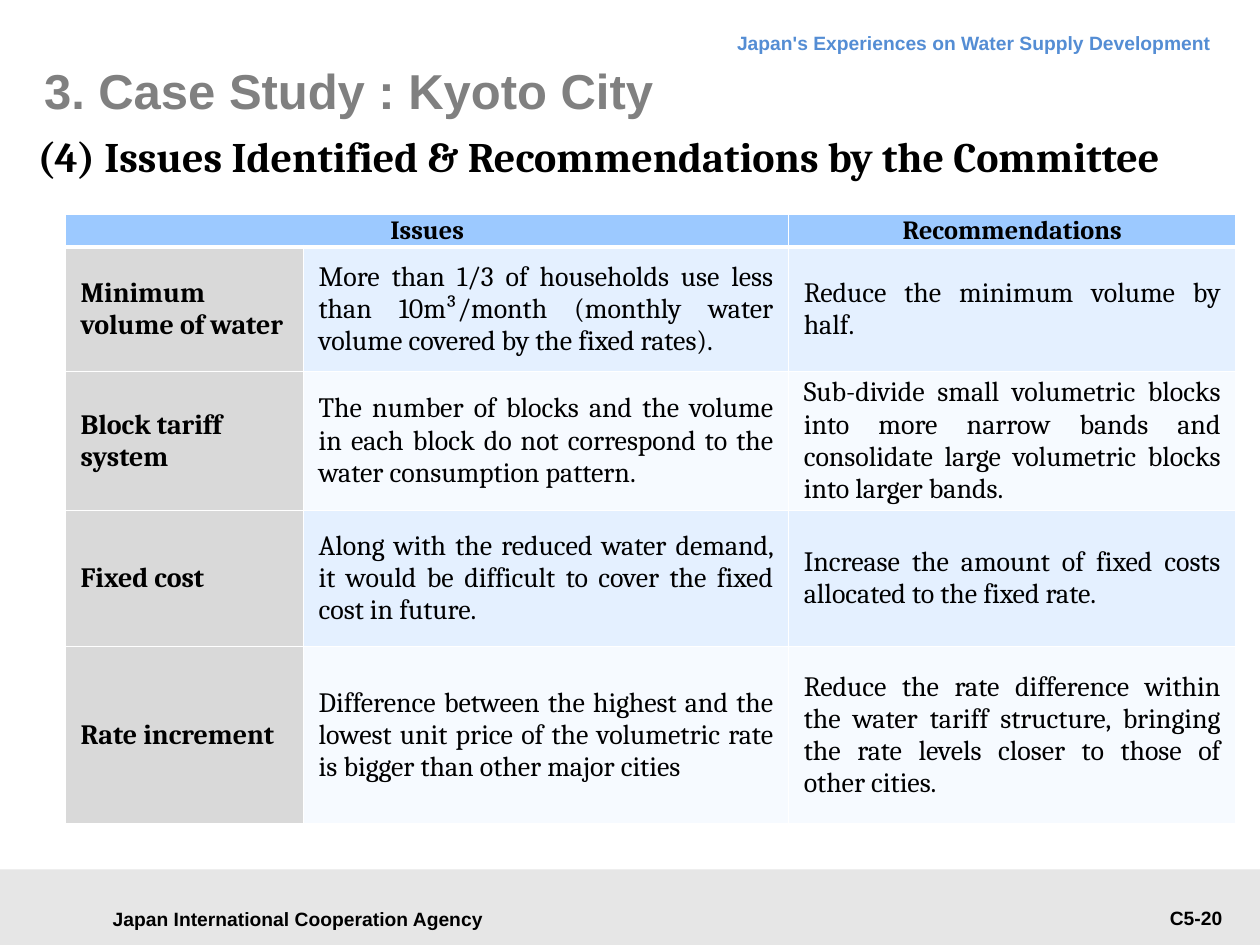
import pptx
import pptx.dml.color
import pptx.enum.shapes
import pptx.enum.text
import pptx.oxml.ns
import pptx.util
from lxml import etree

ALIGN = pptx.enum.text.PP_ALIGN
ANCHOR = pptx.enum.text.MSO_ANCHOR
Inches = pptx.util.Inches
qn = pptx.oxml.ns.qn

WIDTH, HEIGHT = 10, 7.5
FOOTER_HEIGHT = 0.6

HEADINGS = ["Issues", "", "Recommendations"]
TOPICS = [
    ("Minimum volume of water",
     "More than 1/3 of households use less than 10m³/month "
     "(monthly water volume covered by the fixed rates).",
     "Reduce the minimum volume by half."),
    ("Block tariff system",
     "The number of blocks and the volume in each block do not correspond "
     "to the water consumption pattern.",
     "Sub-divide small volumetric blocks into more narrow bands and "
     "consolidate large volumetric blocks into larger bands."),
    ("Fixed cost",
     "Along with the reduced water demand, it would be difficult to cover "
     "the fixed cost in future.",
     "Increase the amount of fixed costs allocated to the fixed rate."),
    ("Rate increment",
     "Difference between the highest and the lowest unit price of the "
     "volumetric rate is bigger than other major cities",
     "Reduce the rate difference within the water tariff structure, "
     "bringing the rate levels closer to those of other cities."),
]
TABLE_LEFT, TABLE_TOP = 0.52, 1.7
COLUMN_WIDTHS = [1.89, 3.85, 3.55]
ROW_HEIGHTS = [0.26, 0.99, 1.07, 1.08, 1.41]
HEADER_FILL, TOPIC_FILL = "9CC9FF", "D9D9D9"
BAND_FILLS = ["CAE2FF", "EFF6FF"]
HEADER_MARGINS = (0.01, 0.01, 0.01, 0)
BODY_MARGINS = (0.12, 0.04, 0.12, 0.04)

# text, (left, top, width, height), format
TEXT_BOXES = [
    ("Japan International Cooperation Agency", (0.71, 7.12, 3.31, 0.34),
     dict(align=ALIGN.CENTER, anchor=ANCHOR.MIDDLE)),
    ("Japan's Experiences on Water Supply Development", (2.72, 0.13, 6.99, 0.38),
     dict(color="548DD4", align=ALIGN.RIGHT, line_points=18)),
    ("C5-20", (8.23, 7.14, 1.57, 0.29), dict(align=ALIGN.RIGHT)),
    ("3. Case Study : Kyoto City", (0.35, 0.36, 9.37, 0.71),
     dict(size=28, color="808080", anchor=ANCHOR.MIDDLE, margins=(0, 0, 0, 0))),
    ("(4) Issues Identified & Recommendations by the Committee",
     (0.2, 0.99, 9.93, 0.5), dict(size=24, font="Cambria")),
]


def rgb(color):
    return pptx.dml.color.RGBColor.from_string(color)


def write(frame, text, size=11, font="Arial", color="000000", bold=True,
          align=ALIGN.LEFT, line_points=None):
    paragraph = frame.paragraphs[0]
    paragraph.text = text
    paragraph.alignment = align
    if line_points:
        paragraph.line_spacing = pptx.util.Pt(line_points)
    paragraph.font.size = pptx.util.Pt(size)
    paragraph.font.name = font
    paragraph.font.bold = bold
    paragraph.font.color.rgb = rgb(color)


def set_margins(target, margins):
    (target.margin_left, target.margin_top,
     target.margin_right, target.margin_bottom) = map(Inches, margins)


def add_text(slide, text, place, anchor=ANCHOR.TOP, margins=(0.1, 0.05, 0.1, 0.05),
             **text_format):
    frame = slide.shapes.add_textbox(*map(Inches, place)).text_frame
    frame.word_wrap = True
    frame.vertical_anchor = anchor
    set_margins(frame, margins)
    write(frame, text, **text_format)


def add_borders(cell, top=1, bottom=1):
    """White cell borders, widths in points; must precede the cell's fill."""
    properties = cell._tc.get_or_add_tcPr()
    for side, points in (("L", 1), ("R", 1), ("T", top), ("B", bottom)):
        line = etree.SubElement(properties, qn(f"a:ln{side}"),
                                w=str(pptx.util.Pt(points)))
        fill = etree.SubElement(line, qn("a:solidFill"))
        etree.SubElement(fill, qn("a:srgbClr"), val="FFFFFF")


def fill_cell(cell, color, opacity=100):
    cell.fill.solid()
    cell.fill.fore_color.rgb = rgb(color)
    if opacity < 100:
        color_element = cell._tc.tcPr.find(".//" + qn("a:solidFill") + "[last()]")
        color_element = cell._tc.tcPr.findall(qn("a:solidFill"))[0][0]
        etree.SubElement(color_element, qn("a:alpha"), val=str(opacity * 1000))


def format_cell(cell, text, row, column):
    cell.vertical_anchor = ANCHOR.MIDDLE
    set_margins(cell, BODY_MARGINS if row else HEADER_MARGINS)
    add_borders(cell, top=3 if row == 1 else 1, bottom=1 if row else 3)
    if row == 0:
        fill_cell(cell, HEADER_FILL)
        size, bold, align = 15, True, ALIGN.CENTER
    elif column == 0:
        fill_cell(cell, TOPIC_FILL)
        size, bold, align = 16, True, ALIGN.LEFT
    else:
        fill_cell(cell, BAND_FILLS[(row - 1) % 2], opacity=50)
        size, bold, align = 16, False, ALIGN.JUSTIFY
    write(cell.text_frame, text, size=size, font="Cambria", bold=bold, align=align)


def add_issue_table(slide):
    rows = [HEADINGS, *TOPICS]
    table = slide.shapes.add_table(
        len(rows), len(COLUMN_WIDTHS), Inches(TABLE_LEFT), Inches(TABLE_TOP),
        Inches(sum(COLUMN_WIDTHS)), Inches(sum(ROW_HEIGHTS))).table
    for column, width in zip(table.columns, COLUMN_WIDTHS):
        column.width = Inches(width)
    for row, height in zip(table.rows, ROW_HEIGHTS):
        row.height = Inches(height)
    for row, texts in enumerate(rows):
        for column, text in enumerate(texts):
            format_cell(table.cell(row, column), text, row, column)
    table.cell(0, 0).merge(table.cell(0, 1))


def add_footer_band(slide):
    band = slide.shapes.add_shape(
        pptx.enum.shapes.MSO_SHAPE.RECTANGLE, 0, Inches(HEIGHT - FOOTER_HEIGHT),
        Inches(WIDTH), Inches(FOOTER_HEIGHT))
    band.shadow.inherit = False
    band.fill.solid()
    band.fill.fore_color.rgb = rgb("E6E6E6")
    band.line.fill.background()


def main():
    presentation = pptx.Presentation()
    presentation.slide_width = Inches(WIDTH)
    presentation.slide_height = Inches(HEIGHT)
    slide = presentation.slides.add_slide(presentation.slide_layouts[6])
    add_footer_band(slide)
    add_issue_table(slide)
    for text, place, text_format in TEXT_BOXES:
        add_text(slide, text, place, **text_format)
    presentation.save("out.pptx")


if __name__ == "__main__":
    main()
